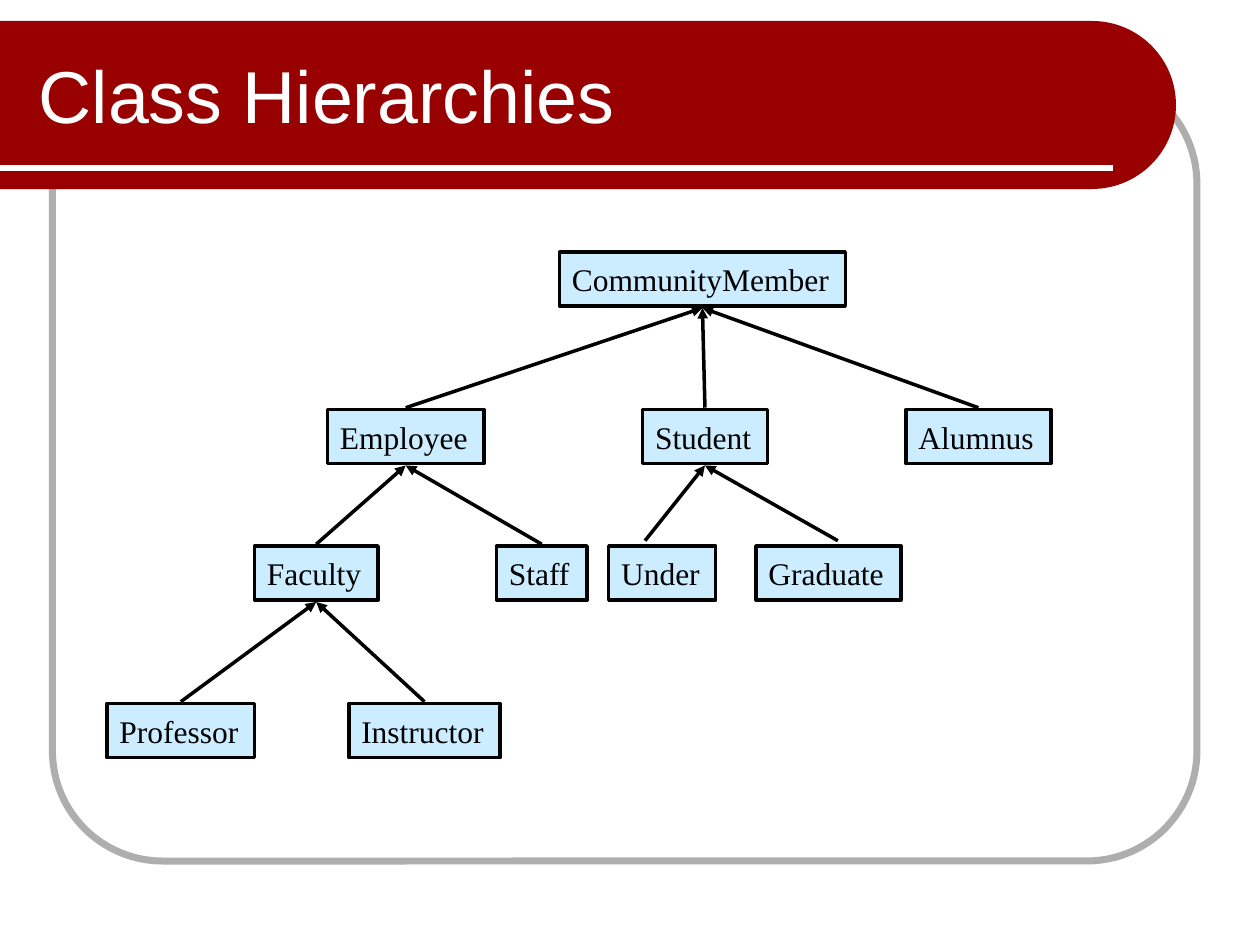
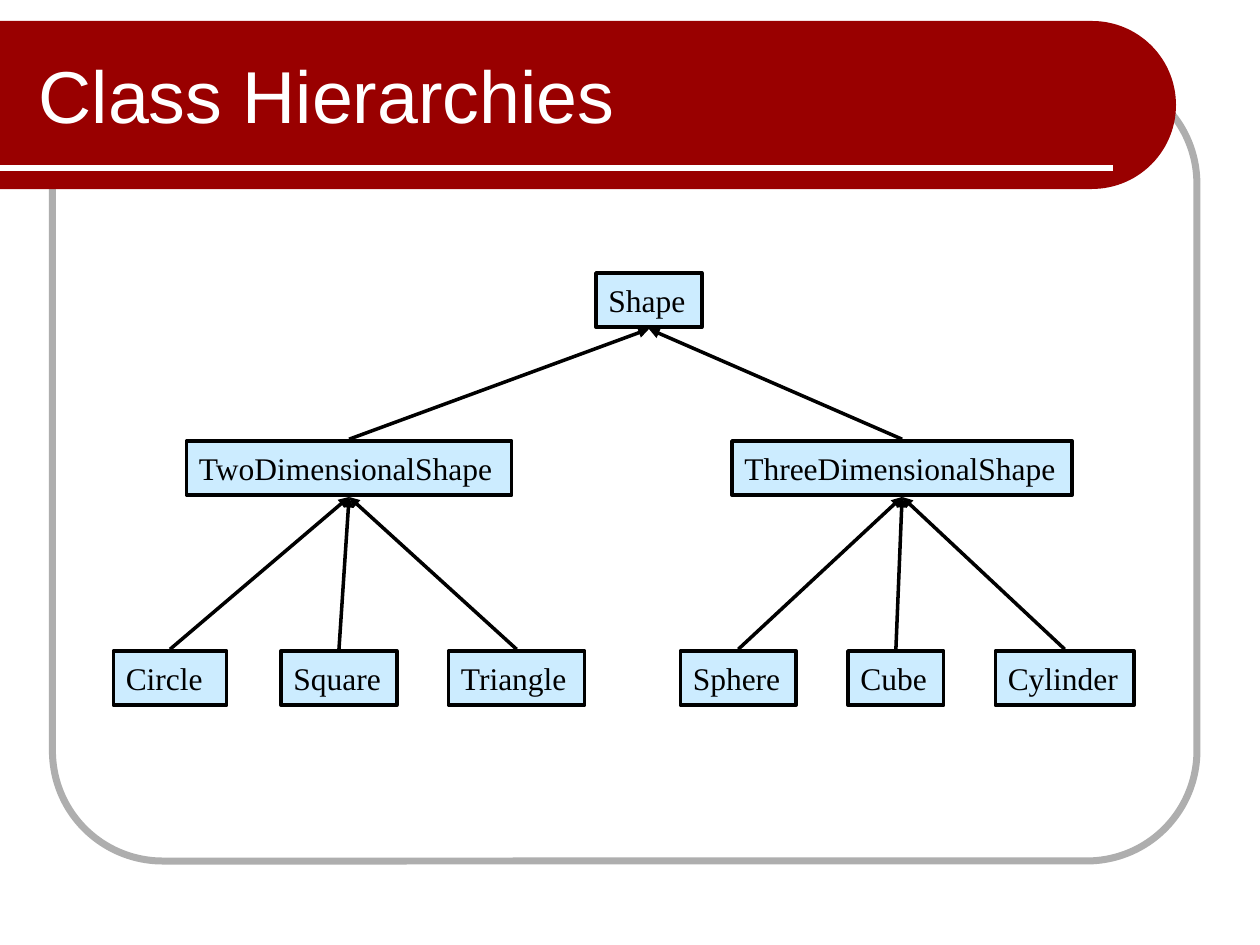
import math
from dataclasses import dataclass

from lxml import etree
from pptx import Presentation
from pptx import util as u
from pptx.dml import color
from pptx.enum import shapes, text
from pptx.oxml import ns

Pt = u.Pt

CRIMSON = "990000"
GREY = "AEAEAE"
SKY = "CCECFF"
BLACK = "000000"
WHITE = "FFFFFF"
TITLE = "Class Hierarchies"
CLASS_HEIGHT = 31
ARROW_GAP = 1


@dataclass(frozen=True)
class ClassBox:
    name: str
    left: float
    top: float
    width: float
    parent: str = ""
    foot_shift: float = 0
    foot_lift: float = 0

    @property
    def centre(self) -> float:
        return self.left + self.width / 2


COMMUNITY = [
    ClassBox("CommunityMember", 319.7, 144, 163.4),
    ClassBox("Employee", 187.2, 234, 89.3, "CommunityMember"),
    ClassBox("Student", 367.2, 234, 71.3, "CommunityMember"),
    ClassBox("Alumnus", 517.7, 234, 82.8, "CommunityMember"),
    ClassBox("Faculty", 145.4, 312, 70.6, "Employee"),
    ClassBox("Staff", 283.7, 312, 51.8, "Employee"),
    ClassBox("Professor", 61.2, 402, 84.2, "Faculty"),
    ClassBox("Instructor", 199.4, 402, 86.4, "Faculty"),
    ClassBox("Under", 347.8, 312, 61.2, "Student", -9.8, 2),
    ClassBox("Graduate", 432, 312, 82.8, "Student", 5.4, 2),
]

SHAPES = [
    ClassBox("Shape", 340.6, 156, 60.5),
    ClassBox("TwoDimensionalShape", 106.6, 252, 185.8, "Shape"),
    ClassBox("ThreeDimensionalShape", 418.3, 252, 194.4, "Shape"),
    ClassBox("Circle", 64.8, 372, 64.8, "TwoDimensionalShape"),
    ClassBox("Square", 160.6, 372, 66.2, "TwoDimensionalShape"),
    ClassBox("Triangle", 256.3, 372, 77.8, "TwoDimensionalShape"),
    ClassBox("Sphere", 388.8, 372, 66.2, "ThreeDimensionalShape"),
    ClassBox("Cube", 484.6, 372, 54.7, "ThreeDimensionalShape"),
    ClassBox("Cylinder", 568.8, 372, 79.2, "ThreeDimensionalShape"),
]


def rgb(value: str) -> color.RGBColor:
    return color.RGBColor.from_string(value)


def paint(shape, fill: str = "", line: str = "", weight: float = 0) -> None:
    shape.shadow.inherit = False
    if fill:
        shape.fill.solid()
        shape.fill.fore_color.rgb = rgb(fill)
    else:
        shape.fill.background()
    if line:
        shape.line.color.rgb = rgb(line)
        shape.line.width = Pt(weight)
    else:
        shape.line.fill.background()


def write(shape, words: str, font: str, size: float, ink: str) -> None:
    frame = shape.text_frame
    frame.word_wrap = True
    frame.vertical_anchor = text.MSO_ANCHOR.MIDDLE
    paragraph = frame.paragraphs[0]
    paragraph.alignment = text.PP_ALIGN.LEFT
    run = paragraph.add_run()
    run.text = words
    run.font.name = font
    run.font.size = Pt(size)
    run.font.color.rgb = rgb(ink)


def draw_line(slide, start: tuple[float, float], end: tuple[float, float],
              ink: str, weight: float, arrow: bool = False) -> None:
    line = slide.shapes.add_connector(
        shapes.MSO_CONNECTOR.STRAIGHT, *map(Pt, start + end))
    line.line.color.rgb = rgb(ink)
    line.line.width = Pt(weight)
    if arrow:
        etree.SubElement(line.line._get_or_add_ln(), ns.qn("a:tailEnd"), type="triangle")
    etree.SubElement(line._element.spPr, ns.qn("a:effectLst"))


def draw_band(slide) -> None:
    centre_x, centre_y, radius = 624, 60, 48
    angles = [math.radians(degree) for degree in range(-90, 91, 3)]
    curve = [(Pt(centre_x + radius * math.cos(a)), Pt(centre_y + radius * math.sin(a)))
             for a in angles]
    outline = slide.shapes.build_freeform(0, Pt(centre_y - radius))
    outline.add_line_segments(curve + [(0, Pt(centre_y + radius))], close=True)
    paint(outline.convert_to_shape(), CRIMSON)


def draw_backdrop(slide) -> None:
    frame = slide.shapes.add_shape(
        shapes.MSO_SHAPE.ROUNDED_RECTANGLE, Pt(30), Pt(42), Pt(654), Pt(450))
    frame.adjustments[0] = 0.14
    paint(frame, line=GREY, weight=4)
    draw_band(slide)
    draw_line(slide, (0, 96), (636, 96), WHITE, 3)
    heading = slide.shapes.add_textbox(Pt(15), Pt(18), Pt(561), Pt(72))
    write(heading, TITLE, "Arial", 42, WHITE)


def draw_class(slide, box: ClassBox) -> None:
    node = slide.shapes.add_shape(
        shapes.MSO_SHAPE.RECTANGLE,
        Pt(box.left), Pt(box.top), Pt(box.width), Pt(CLASS_HEIGHT))
    paint(node, SKY, BLACK, 2)
    node.text_frame.margin_right = 0
    write(node, box.name, "Times New Roman", 18, BLACK)


def draw_inheritance(slide, child: ClassBox, parent: ClassBox) -> None:
    foot = (child.centre + child.foot_shift, child.top - ARROW_GAP - child.foot_lift)
    tip = (parent.centre, parent.top + CLASS_HEIGHT + ARROW_GAP)
    draw_line(slide, foot, tip, BLACK, 2, arrow=True)


def add_hierarchy(deck, classes: list[ClassBox]) -> None:
    slide = deck.slides.add_slide(deck.slide_layouts[6])
    draw_backdrop(slide)
    by_name = {box.name: box for box in classes}
    for box in classes:
        draw_class(slide, box)
    for box in classes:
        if box.parent:
            draw_inheritance(slide, box, by_name[box.parent])


def main() -> None:
    deck = Presentation()
    deck.slide_width, deck.slide_height = Pt(720), Pt(540)
    for classes in (COMMUNITY, SHAPES):
        add_hierarchy(deck, classes)
    deck.save("out.pptx")


if __name__ == "__main__":
    main()
